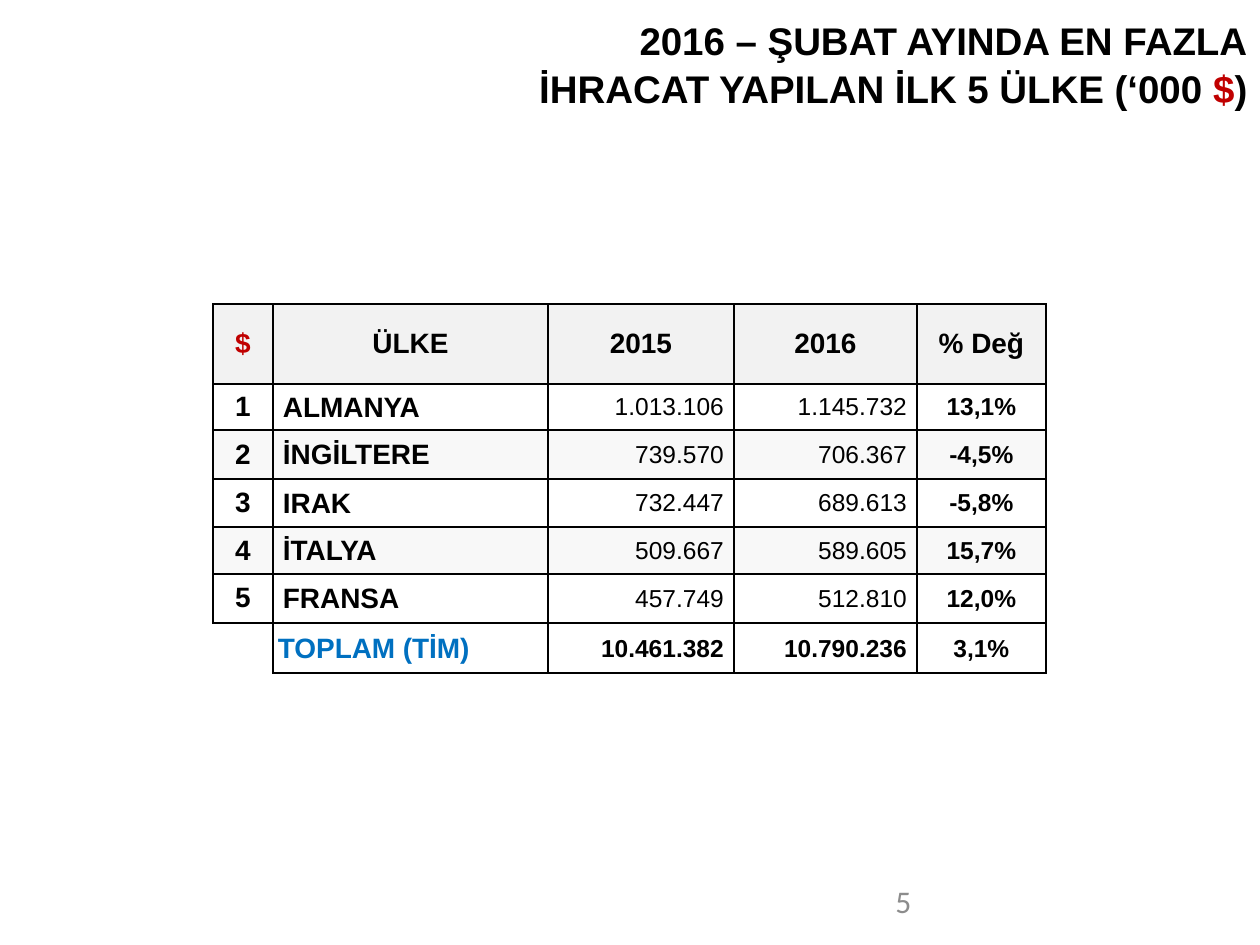
from lxml import etree
from pptx import Presentation, util as u
from pptx.dml.color import RGBColor
from pptx.enum import text
from pptx.oxml.ns import qn

BLACK = RGBColor(0, 0, 0)
RED = RGBColor(0xC0, 0, 0)
BLUE = RGBColor(0, 0x70, 0xC0)
GRAY = RGBColor(0x8C, 0x8C, 0x8C)
WHITE = RGBColor(0xFF, 0xFF, 0xFF)
HEADER_FILL = RGBColor(0xF2, 0xF2, 0xF2)
BAND_FILL = RGBColor(0xF8, 0xF8, 0xF8)

LEFT, CENTER, RIGHT = (text.PP_ALIGN.LEFT, text.PP_ALIGN.CENTER,
                       text.PP_ALIGN.RIGHT)
PX_PER_INCH = 126

TITLE_LINES = [
    [("2016 – ŞUBAT AYINDA EN FAZLA", BLACK)],
    [("İHRACAT YAPILAN İLK 5 ÜLKE (‘000 ", BLACK), ("$", RED), (")", BLACK)],
]
COLUMN_WIDTHS = [60, 275, 186, 183, 129]
ROW_HEIGHTS = [80, 46, 49, 48, 47, 49, 48]
ROWS = [
    ["$", "ÜLKE", "2015", "2016", "% Değ"],
    ["1", "ALMANYA", "1.013.106", "1.145.732", "13,1%"],
    ["2", "İNGİLTERE", "739.570", "706.367", "-4,5%"],
    ["3", "IRAK", "732.447", "689.613", "-5,8%"],
    ["4", "İTALYA", "509.667", "589.605", "15,7%"],
    ["5", "FRANSA", "457.749", "512.810", "12,0%"],
    ["", "TOPLAM (TİM)", "10.461.382", "10.790.236", "3,1%"],
]
# Alignment, size and insets (left, top, right, bottom) of each column
COLUMN_STYLES = [
    (CENTER, 16, (12, 6, 12, 6)),
    (LEFT, 16, (10, 1, 1, 0)),
    (RIGHT, 14, (0, 1, 10, 0)),
    (RIGHT, 14, (0, 1, 10, 0)),
    (CENTER, 14, (1, 1, 1, 0)),
]


def px(length):
    return u.Emu(round(length * 914400 / PX_PER_INCH))


def write(para, words, size=16, color=BLACK, bold=True, font="Arial",
          align=LEFT):
    para.alignment = align
    span = para.add_run()
    span.text = words
    span.font.name, span.font.size = font, u.Pt(size)
    span.font.bold, span.font.color.rgb = bold, color


class SlideBuilder:
    def __init__(self, deck):
        self.slide = deck.slides.add_slide(deck.slide_layouts[5])

    def frame(self, box, anchor=text.MSO_ANCHOR.MIDDLE):
        frame = box.text_frame
        frame.word_wrap = True
        frame.auto_size = text.MSO_AUTO_SIZE.NONE
        frame.vertical_anchor = anchor
        return frame

    def title(self, lines, left, top, width, height):
        box = self.slide.shapes.title
        box.left, box.top, box.width, box.height = map(
            px, (left, top, width, height))
        frame = self.frame(box)
        for index, line in enumerate(lines):
            para = frame.add_paragraph() if index else frame.paragraphs[0]
            para.line_spacing = 1.05
            for words, color in line:
                write(para, words, size=22, color=color, align=RIGHT)

    def label(self, words, left, top, width, height, **style):
        box = self.slide.shapes.add_textbox(
            *map(px, (left, top, width, height)))
        write(self.frame(box).paragraphs[0], words, **style)

    def border(self, cell, sides="LRTB"):
        properties = cell._tc.get_or_add_tcPr()
        for index, side in enumerate("LRTB"):
            line = etree.Element(qn(f"a:ln{side}"), w=str(u.Pt(1)))
            if side in sides:
                fill = etree.SubElement(line, qn("a:solidFill"))
                etree.SubElement(fill, qn("a:srgbClr"), val=str(BLACK))
            else:
                etree.SubElement(line, qn("a:noFill"))
            properties.insert(index, line)

    def cell(self, cell, words, fill, insets, sides="LRTB", **style):
        cell.fill.solid()
        cell.fill.fore_color.rgb = fill
        cell.vertical_anchor = text.MSO_ANCHOR.MIDDLE
        (cell.margin_left, cell.margin_top,
         cell.margin_right, cell.margin_bottom) = map(px, insets)
        if words:
            write(cell.text_frame.paragraphs[0], words, **style)
        self.border(cell, sides)

    def table(self, rows, left, top):
        table = self.slide.shapes.add_table(
            len(rows), len(rows[0]), px(left), px(top),
            px(sum(COLUMN_WIDTHS)), px(sum(ROW_HEIGHTS))).table
        table.first_row = table.horz_banding = False
        for column, width in zip(table.columns, COLUMN_WIDTHS):
            column.width = px(width)
        for row, height in zip(table.rows, ROW_HEIGHTS):
            row.height = px(height)

        total = len(rows) - 1
        for r, values in enumerate(rows):
            for c, words in enumerate(values):
                align, size, insets = COLUMN_STYLES[c]
                fill, color, sides = WHITE, BLACK, "LRTB"
                bold = c not in (2, 3) or r == total
                if r == 0:  # header
                    align, size, insets = CENTER, 16, (12, 6, 12, 6)
                    fill, bold = HEADER_FILL, True
                    color = RED if c == 0 else BLACK
                elif r == total:
                    if c == 0:
                        sides = "RT"
                    elif c == 1:
                        color, insets = BLUE, (5, 1, 1, 0)
                elif r % 2 == 0:
                    fill = BAND_FILL
                self.cell(table.cell(r, c), words, fill, insets, sides,
                          size=size, color=color, bold=bold, align=align)


def main():
    deck = Presentation()
    deck.slide_width, deck.slide_height = u.Inches(10), u.Inches(7.5)
    builder = SlideBuilder(deck)
    # Title
    builder.title(TITLE_LINES, 134, 10, 1126, 106)
    # Export table
    builder.table(ROWS, 213, 304)
    # Page number
    builder.label("5", 883, 876, 265, 50, size=18, color=GRAY, bold=False,
                  font="Calibri")
    deck.save("out.pptx")


if __name__ == "__main__":
    main()
